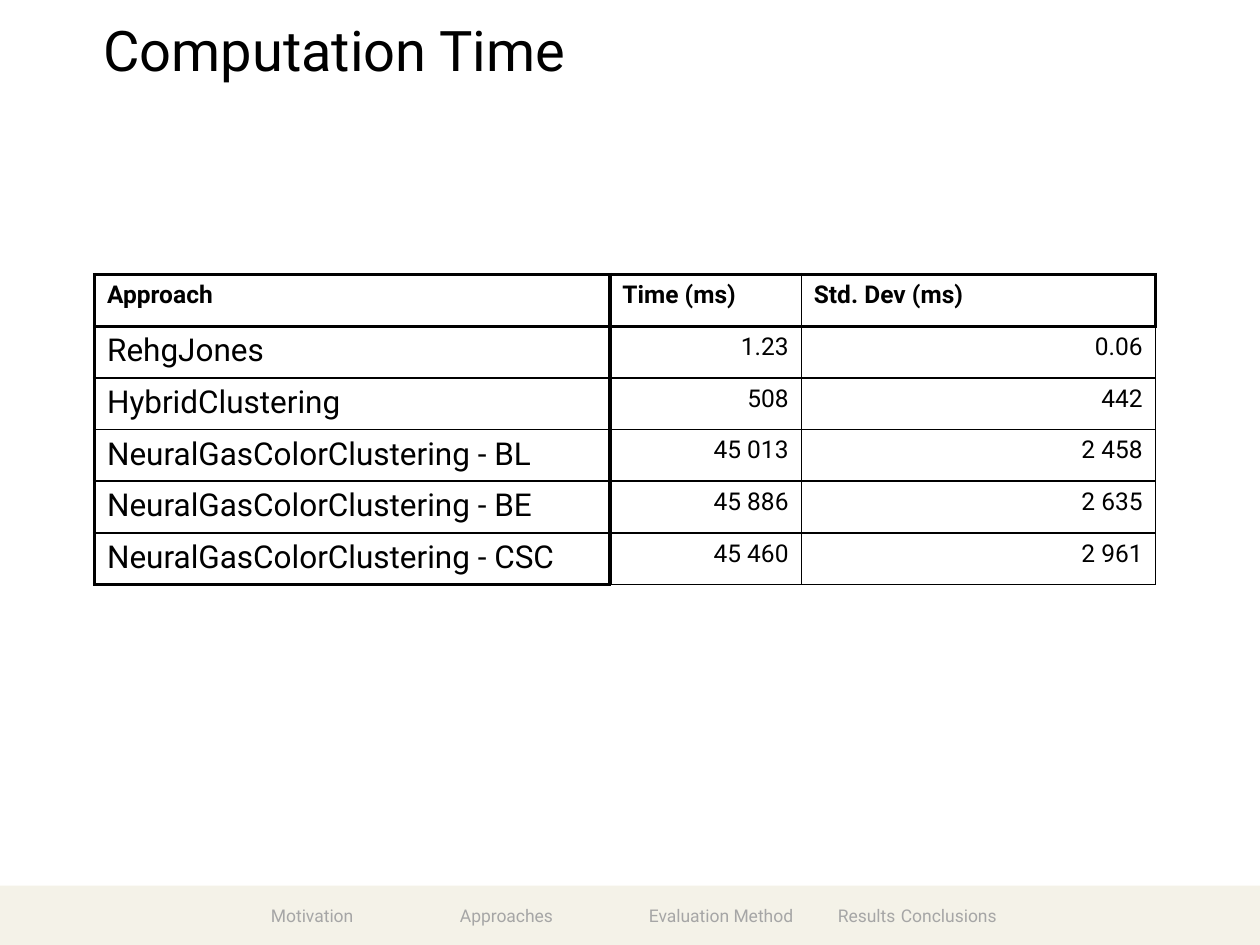
import pptx
import pptx.dml.color
import pptx.enum.shapes
import pptx.enum.text
import pptx.oxml
import pptx.oxml.ns
import pptx.util

BLACK = pptx.dml.color.RGBColor(0x00, 0x00, 0x00)
GRAY = pptx.dml.color.RGBColor(0xA6, 0xA6, 0xA6)
CREAM = pptx.dml.color.RGBColor(0xF4, 0xF2, 0xE8)
FONT = "Roboto"
THICK, THIN = 2.25, 1
COLUMNS = (4.09, 1.52, 2.81)
ROW_HEIGHT = 0.41
ROWS = (
    ("Approach", "Time (ms)", "Std. Dev (ms)"),
    ("RehgJones", "1.23", "0.06"),
    ("HybridClustering", "508", "442"),
    ("NeuralGasColorClustering - BL", "45 013", "2 458"),
    ("NeuralGasColorClustering - BE", "45 886", "2 635"),
    ("NeuralGasColorClustering - CSC", "45 460", "2 961"),
)
SECTIONS = "Motivation\t\tApproaches\t\tEvaluation Method\tResults\tConclusions"


def inches(*lengths):
    """Convert several lengths to slide units."""
    return [pptx.util.Inches(n) for n in lengths]


def style(p, size, color=BLACK, align=pptx.enum.text.PP_ALIGN.LEFT, bold=False):
    """Set the font and alignment of a paragraph."""
    p.alignment = align
    p.font.name = FONT
    p.font.size = pptx.util.Pt(size)
    p.font.color.rgb = color
    p.font.bold = bold


def fit_frame(tf, anchor, margins):
    """Set wrapping, anchor and left, top, right and bottom margins."""
    tf.word_wrap = True
    tf.auto_size = pptx.enum.text.MSO_AUTO_SIZE.NONE
    tf.vertical_anchor = anchor
    tf.margin_left, tf.margin_top, tf.margin_right, tf.margin_bottom = inches(*margins)


def add_title(s, text):
    """Place and format the title placeholder."""
    sp = s.shapes.title
    sp.left, sp.top, sp.width, sp.height = inches(0.72, 0.06, 8.64, 0.7)
    sp.text_frame.text = text
    fit_frame(sp.text_frame, pptx.enum.text.MSO_ANCHOR.BOTTOM, (0.1, 0, 0.06, 0.1))
    style(sp.text_frame.paragraphs[0], 32)


def add_footer(s, text):
    """Draw the footer band with the section names."""
    band = s.shapes.add_shape(
        pptx.enum.shapes.MSO_SHAPE.RECTANGLE, *inches(0, 7.03, 10, 0.47))
    band.shadow.inherit = False
    band.fill.solid()
    band.fill.fore_color.rgb = CREAM
    band.line.fill.background()
    tf = s.shapes.add_textbox(*inches(0.75, 7.13, 8.56, 0.27)).text_frame
    tf.text = text
    fit_frame(tf, pptx.enum.text.MSO_ANCHOR.MIDDLE, (0.1, 0, 0.1, 0))
    style(tf.paragraphs[0], 10, GRAY, pptx.enum.text.PP_ALIGN.CENTER)


def set_borders(cell, thick):
    """Draw the four cell borders, thick on the sides that are named."""
    tc_pr = cell._tc.get_or_add_tcPr()
    for side in "LRTB":
        width = pptx.util.Pt(THICK if side in thick else THIN)
        tc_pr.append(pptx.oxml.parse_xml(
            f'<a:ln{side} {pptx.oxml.ns.nsdecls("a")} w="{width}">'
            f'<a:solidFill><a:srgbClr val="{BLACK}"/></a:solidFill></a:ln{side}>'))


def thick_sides(row, col):
    """Name the thick sides: around the header row and the first column."""
    rules = {
        "L": col <= 1,
        "R": col == 0 or (row == 0 and col == len(COLUMNS) - 1),
        "T": row <= 1,
        "B": row == 0 or (row == len(ROWS) - 1 and col == 0),
    }
    return [side for side, thick in rules.items() if thick]


def add_time_table(s):
    """Add the table of computation times."""
    table = s.shapes.add_table(
        len(ROWS), len(COLUMNS),
        *inches(0.75, 2.18, sum(COLUMNS), ROW_HEIGHT * len(ROWS))).table
    table.first_row = table.horz_banding = False
    for column, width in zip(table.columns, COLUMNS):
        column.width = pptx.util.Inches(width)
    for row, texts in enumerate(ROWS):
        for col, text in enumerate(texts):
            cell = table.cell(row, col)
            cell.text = text
            set_borders(cell, thick_sides(row, col))
            cell.fill.background()
            header, name = row == 0, col == 0
            align = pptx.enum.text.PP_ALIGN
            style(cell.text_frame.paragraphs[0], 18 if name and not header else 14,
                  align=align.LEFT if header or name else align.RIGHT, bold=header)


def main():
    """Build and save the slide."""
    prs = pptx.Presentation()
    prs.slide_width, prs.slide_height = inches(10, 7.5)
    s = prs.slides.add_slide(prs.slide_layouts[5])
    add_footer(s, SECTIONS)
    add_title(s, "Computation Time")
    add_time_table(s)
    prs.save("out.pptx")


if __name__ == "__main__":
    main()
